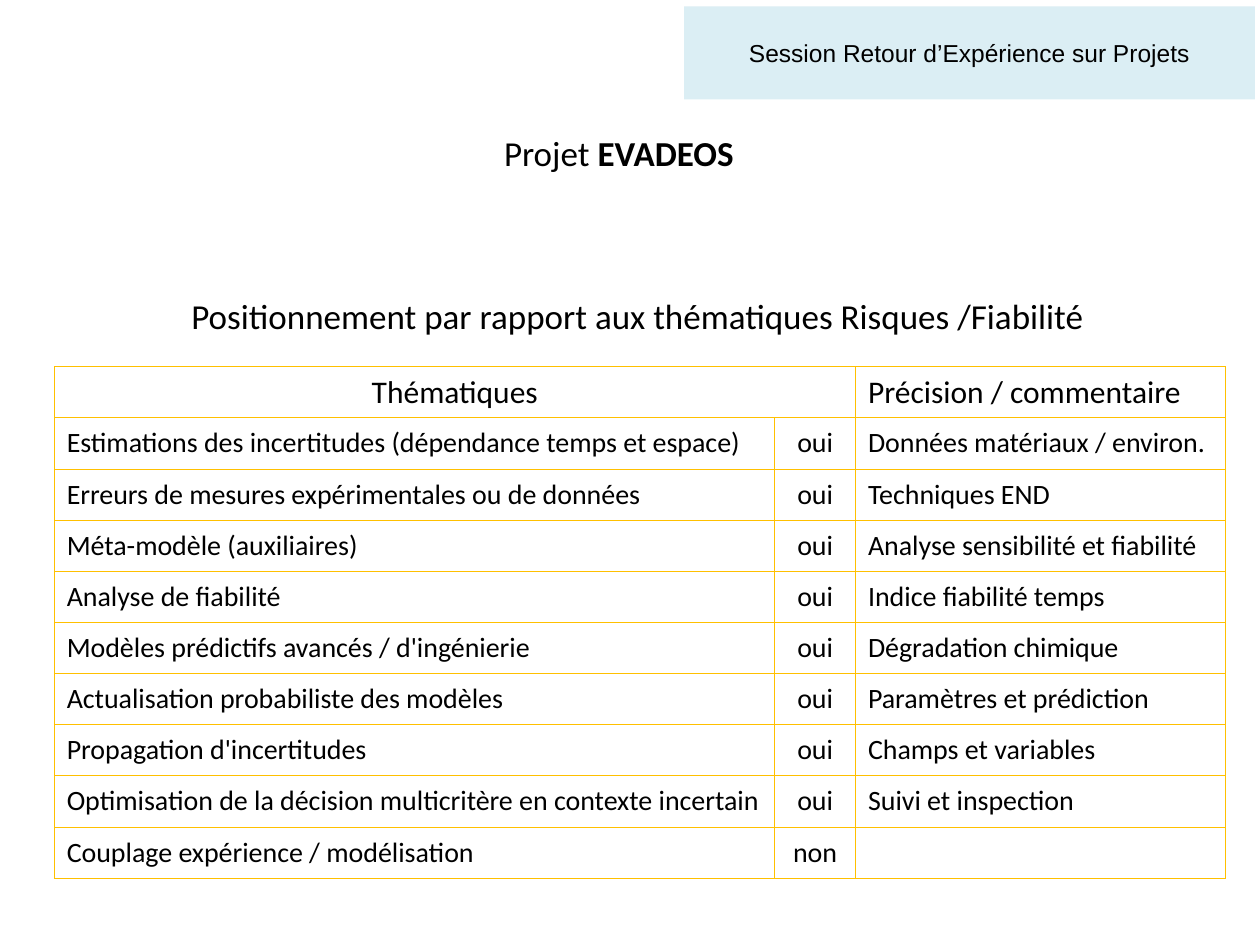
from lxml.etree import SubElement
from pptx import Presentation
from pptx.dml.color import RGBColor
from pptx.enum.shapes import MSO_SHAPE
from pptx.enum.text import MSO_ANCHOR, PP_ALIGN
from pptx.oxml.ns import qn
from pptx.util import Inches, Pt

COLORS = {"text": "000000", "banner": "DBEEF4", "border": "FFC000"}
WIDTH, HEIGHT = Inches(10), Inches(7.5)


def add_text(paragraph, text, size, font="Calibri", bold=False):
    run = paragraph.add_run()
    run.text = text
    run.font.size = Pt(size)
    run.font.name = font
    run.font.bold = bold
    run.font.color.rgb = RGBColor.from_string(COLORS["text"])


def draw_borders(cell):
    properties = cell._tc.get_or_add_tcPr()
    for side in ("a:lnL", "a:lnR", "a:lnT", "a:lnB"):
        line = SubElement(properties, qn(side), w=str(Pt(0.5)))
        fill = SubElement(line, qn("a:solidFill"))
        SubElement(fill, qn("a:srgbClr"), val=COLORS["border"])


prs = Presentation()
prs.slide_width, prs.slide_height = WIDTH, HEIGHT
slide = prs.slides.add_slide(prs.slide_layouts[5])

banner = slide.shapes.add_shape(
    MSO_SHAPE.RECTANGLE, Inches(5.43), Inches(0.05), Inches(4.53), Inches(0.74))
banner.shadow.inherit = False
banner.fill.solid()
banner.fill.fore_color.rgb = RGBColor.from_string(COLORS["banner"])
banner.line.fill.background()
banner.text_frame.vertical_anchor = MSO_ANCHOR.MIDDLE
banner_line = banner.text_frame.paragraphs[0]
banner_line.alignment = PP_ALIGN.CENTER
add_text(banner_line, "Session Retour d’Expérience sur Projets", 14, "Arial")

project = slide.shapes.title
project.left, project.top = Inches(3.9), Inches(0.99)
project.width, project.height = Inches(2.04), Inches(0.44)
subject = slide.shapes.add_textbox(Inches(1.42), Inches(2.29), Inches(7.36), Inches(0.44))
for heading, parts in (
    (project, [("Projet ", False), ("EVADEOS", True)]),
    (subject, [("Positionnement par rapport aux thématiques Risques /Fiabilité", False)]),
):
    heading.text_frame.word_wrap = False
    heading.text_frame.vertical_anchor = MSO_ANCHOR.TOP
    heading_line = heading.text_frame.paragraphs[0]
    heading_line.alignment = PP_ALIGN.LEFT
    for text, bold in parts:
        add_text(heading_line, text, 20, bold=bold)

rows = [
    ("Thématiques", "", "Précision / commentaire"),
    ("Estimations des incertitudes (dépendance temps et espace)", "oui", "Données matériaux / environ."),
    ("Erreurs de mesures expérimentales ou de données", "oui", "Techniques END"),
    ("Méta-modèle (auxiliaires)", "oui", "Analyse sensibilité et fiabilité"),
    ("Analyse de fiabilité", "oui", "Indice fiabilité temps"),
    ("Modèles prédictifs avancés / d'ingénierie", "oui", "Dégradation chimique"),
    ("Actualisation probabiliste des modèles", "oui", "Paramètres et prédiction"),
    ("Propagation d'incertitudes", "oui", "Champs et variables"),
    ("Optimisation de la décision multicritère en contexte incertain", "oui", "Suivi et inspection"),
    ("Couplage expérience / modélisation", "non", ""),
]
column_widths = [5.72, 0.64, 2.94]
themes = slide.shapes.add_table(
    len(rows), len(column_widths), Inches(0.43), Inches(2.91),
    Inches(sum(column_widths)), Inches(4.06)).table
themes.first_row = themes.horz_banding = False
for column, width in zip(themes.columns, column_widths):
    column.width = Inches(width)
themes.cell(0, 0).merge(themes.cell(0, 1))

for r, row in enumerate(rows):
    for c, text in enumerate(row):
        cell = themes.cell(r, c)
        draw_borders(cell)
        cell.fill.background()
        cell.vertical_anchor = MSO_ANCHOR.MIDDLE
        cell_line = cell.text_frame.paragraphs[0]
        centred = c == 1 or (r, c) == (0, 0)
        cell_line.alignment = PP_ALIGN.CENTER if centred else PP_ALIGN.LEFT
        if text:
            add_text(cell_line, text, 16 if r else 18)

prs.save("out.pptx")
